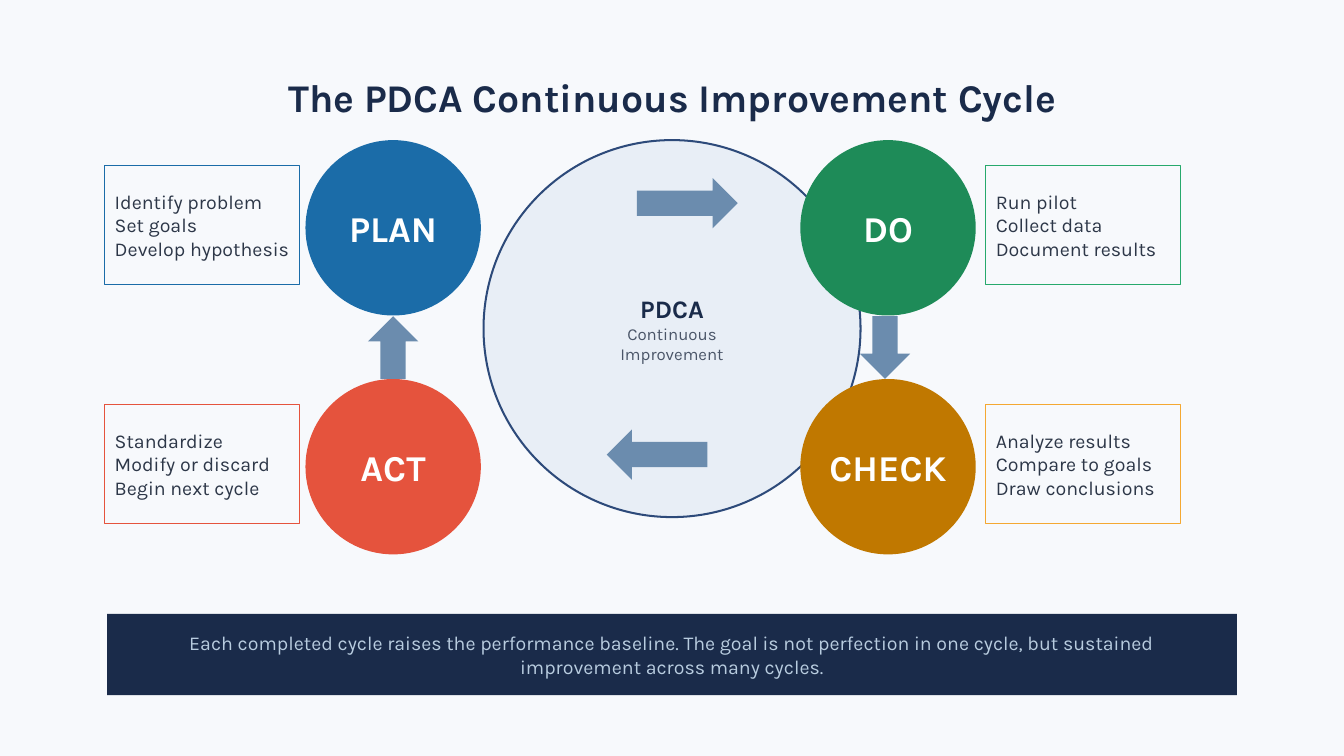
from pptx import Presentation
from pptx.dml.color import RGBColor
from pptx.enum.shapes import MSO_SHAPE
from pptx.enum.text import MSO_ANCHOR, MSO_AUTO_SIZE, PP_ALIGN
from pptx.util import Pt

NAVY, SLATE, PAPER, WHITE = "1A2B4A", "2D3748", "F7F9FC", "FFFFFF"
STEEL = "6B8CAE"
CIRCLE_SIZE = 125.3
CARD_WIDTH, CARD_HEIGHT = 139, 85
TOP, ROW_STEP = 100.1, 170.64
CARD_DROP = 18
LEFT_COLUMN = (218.2, 74.9)
RIGHT_COLUMN = (571.7, 704.2)

STAGES = [
    ("PLAN", LEFT_COLUMN, 0, "1B6CA8", "1B6CA8",
     ["Identify problem", "Set goals", "Develop hypothesis"]),
    ("DO", RIGHT_COLUMN, 0, "1E8B58", "27A96C",
     ["Run pilot", "Collect data", "Document results"]),
    ("ACT", LEFT_COLUMN, 1, "E5533D", "E5533D",
     ["Standardize", "Modify or discard", "Begin next cycle"]),
    ("CHECK", RIGHT_COLUMN, 1, "C07800", "F4A832",
     ["Analyze results", "Compare to goals", "Draw conclusions"]),
]

ARROWS = [
    (MSO_SHAPE.RIGHT_ARROW, 455, 127.2, 72, 36),
    (MSO_SHAPE.LEFT_ARROW, 433.4, 306.7, 72, 36),
    (MSO_SHAPE.DOWN_ARROW, 614.2, 225.9, 36, 44.8),
    (MSO_SHAPE.UP_ARROW, 262.8, 225.9, 36, 44.8),
]


def color(value):
    return RGBColor.from_string(value)


class SlideBuilder:
    font_name = "Karla"

    def __init__(self, slide):
        self.slide = slide
        slide.background.fill.solid()
        slide.background.fill.fore_color.rgb = color(PAPER)

    def add_lines(self, shape, lines, alignment=PP_ALIGN.CENTER, insets=(0, 0)):
        frame = shape.text_frame
        frame.word_wrap = True
        frame.auto_size = MSO_AUTO_SIZE.NONE
        frame.vertical_anchor = MSO_ANCHOR.MIDDLE
        frame.margin_left = frame.margin_right = Pt(insets[0])
        frame.margin_top = frame.margin_bottom = Pt(insets[1])
        for index, (text, size, text_color, bold) in enumerate(lines):
            paragraph = frame.add_paragraph() if index else frame.paragraphs[0]
            paragraph.alignment = alignment
            run = paragraph.add_run()
            run.text = text
            run.font.name = self.font_name
            run.font.size = Pt(size)
            run.font.bold = bold
            run.font.color.rgb = color(text_color)

    def title(self, text, left, top, width, height):
        shape = self.slide.shapes.title
        shape.left, shape.top = Pt(left), Pt(top)
        shape.width, shape.height = Pt(width), Pt(height)
        self.add_lines(shape, [(text, 28, NAVY, True)], insets=(7.2, 3.6))

    def shape(self, kind, left, top, width, height, fill, line=None, line_width=0.72):
        shape = self.slide.shapes.add_shape(kind, Pt(left), Pt(top), Pt(width), Pt(height))
        shape.shadow.inherit = False
        shape.fill.solid()
        shape.fill.fore_color.rgb = color(fill)
        if line:
            shape.line.color.rgb = color(line)
            shape.line.width = Pt(line_width)
        else:
            shape.line.fill.background()
        return shape

    def hub(self, left, top, size):
        hub = self.shape(MSO_SHAPE.OVAL, left, top, size, size, "E8EEF6", "2D4A7A", 1.44)
        self.add_lines(hub, [("PDCA", 18, NAVY, True),
                             ("Continuous", 12, "4A5568", False),
                             ("Improvement", 12, "4A5568", False)])

    def stage(self, name, column, row, fill, border, steps):
        circle_left, card_left = column
        top = TOP + row * ROW_STEP
        circle = self.shape(MSO_SHAPE.OVAL, circle_left, top, CIRCLE_SIZE, CIRCLE_SIZE, fill)
        self.add_lines(circle, [(name, 26, WHITE, True)])
        card = self.shape(MSO_SHAPE.RECTANGLE, card_left, top + CARD_DROP,
                          CARD_WIDTH, CARD_HEIGHT, PAPER, border)
        self.add_lines(card, [(step, 14, SLATE, False) for step in steps],
                       PP_ALIGN.LEFT, (7.2, 7.2))

    def banner(self, text, left, top, width, height):
        banner = self.shape(MSO_SHAPE.RECTANGLE, left, top, width, height, NAVY)
        self.add_lines(banner, [(text, 14, "B8CCDF", False)], insets=(14.4, 0))


def main():
    presentation = Presentation()
    presentation.slide_width, presentation.slide_height = Pt(960), Pt(540)
    builder = SlideBuilder(presentation.slides.add_slide(presentation.slide_layouts[5]))
    builder.title("The PDCA Continuous Improvement Cycle", 76.5, 46.8, 807, 44.6)
    builder.hub(345.4, TOP, 269.3)
    for stage in STAGES:
        builder.stage(*stage)
    for arrow in ARROWS:
        builder.shape(*arrow, STEEL)
    builder.banner("Each completed cycle raises the performance baseline. The goal is not "
                   "perfection in one cycle, but sustained improvement across many cycles.",
                   76.5, 438.4, 807, 58.2)
    presentation.save("out.pptx")


if __name__ == "__main__":
    main()
